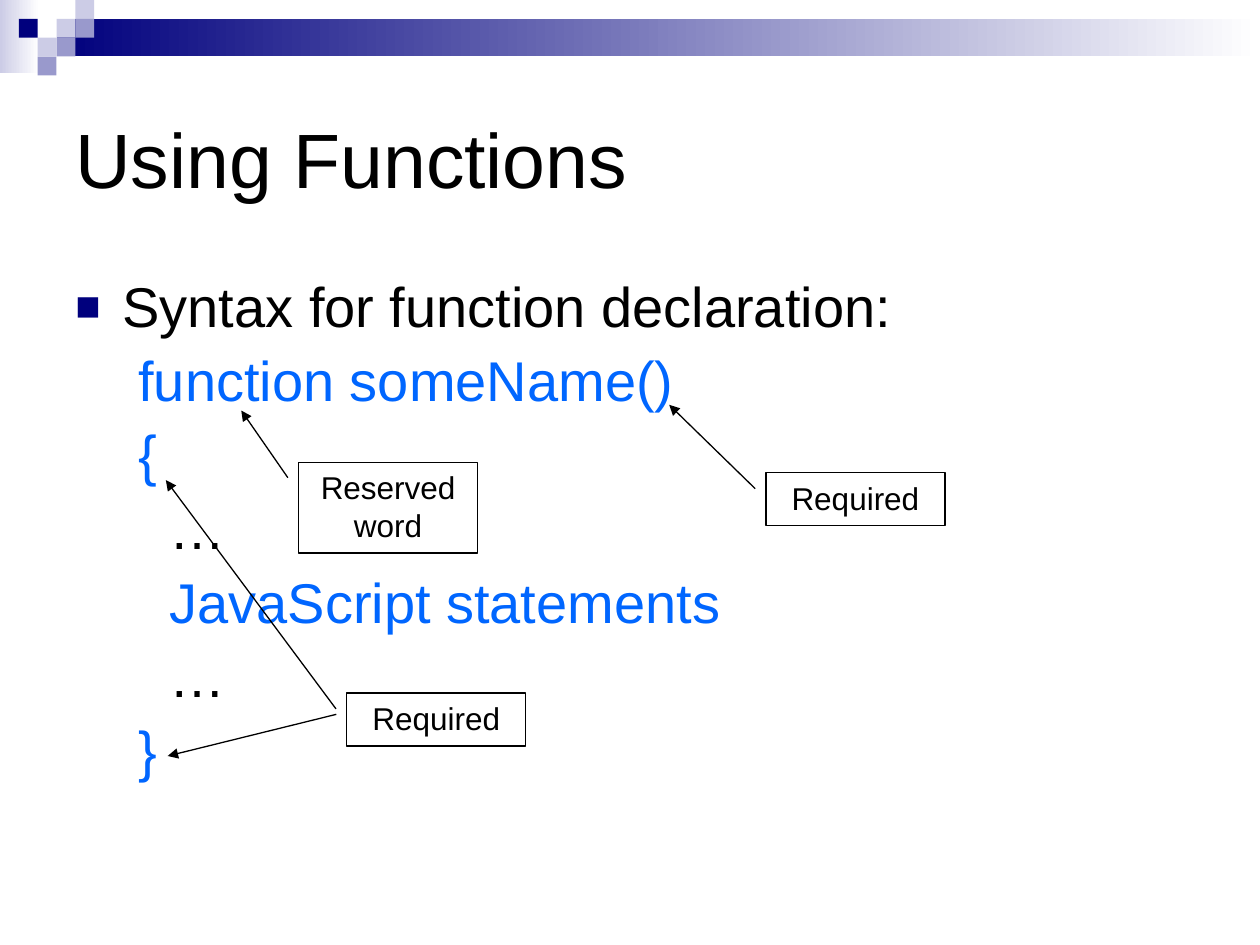
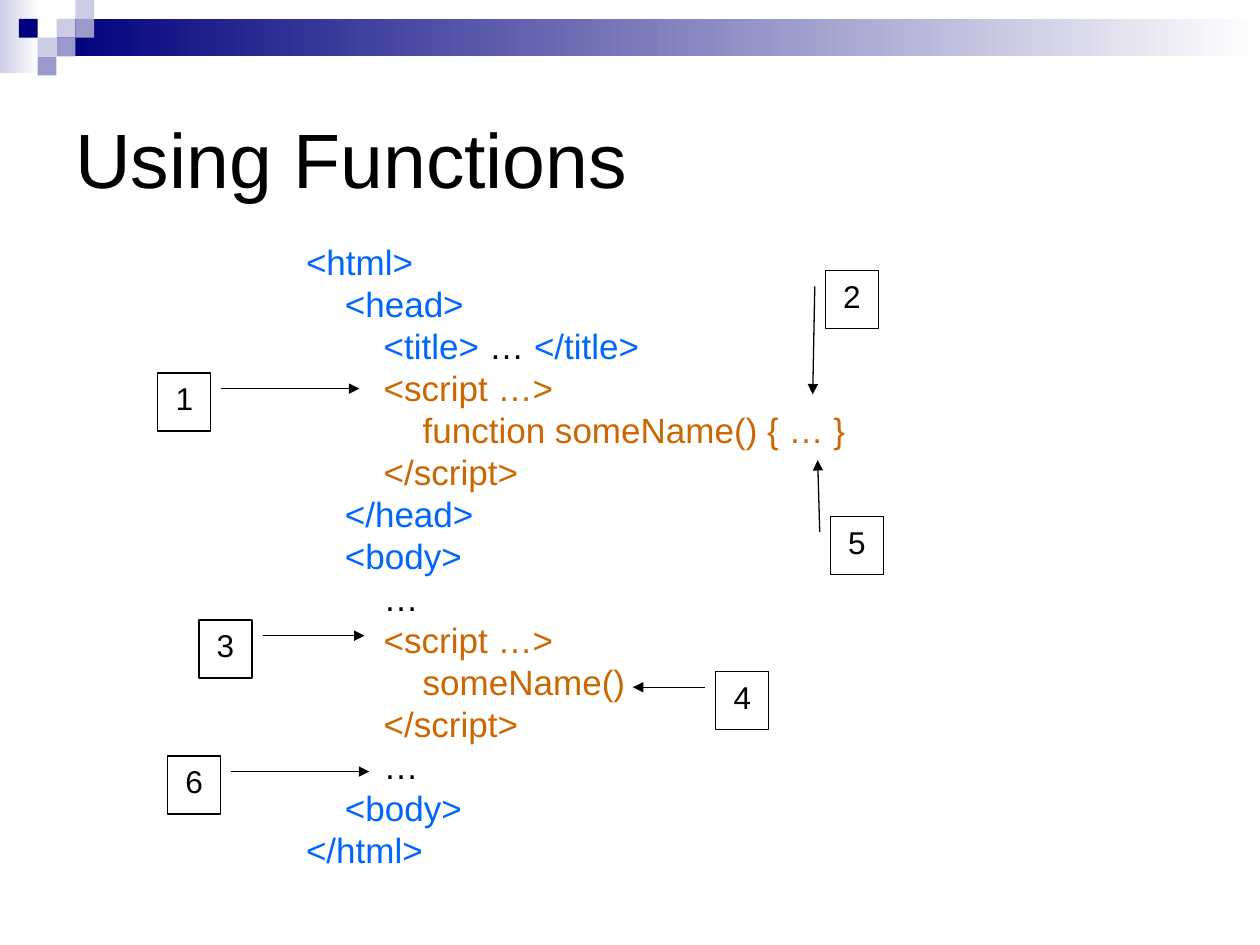
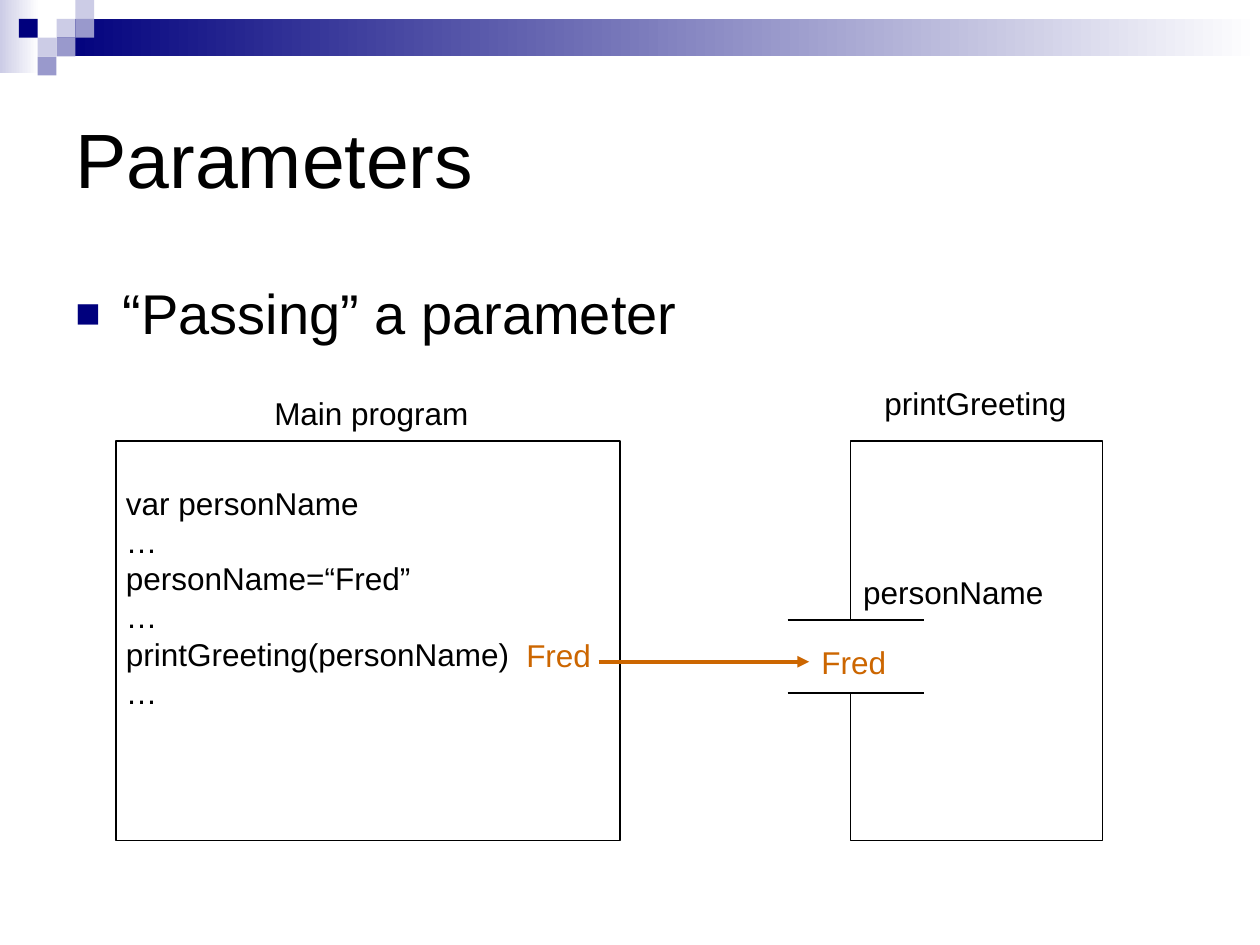
from dataclasses import dataclass

from lxml import etree
from pptx import Presentation
from pptx.dml.color import RGBColor
from pptx.enum.shapes import MSO_CONNECTOR, MSO_SHAPE
from pptx.enum.text import MSO_ANCHOR, PP_ALIGN
from pptx.oxml.ns import qn
from pptx.util import Cm, Pt

RECTANGLE = MSO_SHAPE.RECTANGLE
CALLOUT = MSO_SHAPE.LINE_CALLOUT_1
STRAIGHT = MSO_CONNECTOR.STRAIGHT
TOP, MIDDLE = MSO_ANCHOR.TOP, MSO_ANCHOR.MIDDLE
LEFT, CENTER = PP_ALIGN.LEFT, PP_ALIGN.CENTER

BLACK, WHITE = "000000", "FFFFFF"
NAVY, LILAC, LAVENDER = "00007D", "9999CC", "CCCCE6"
BLUE, ORANGE = "0066FF", "CC6600"
FONT = "Arial"
TILE = 0.38
SPACE_BEFORE = 0.24


@dataclass(frozen=True)
class Box:
    left: float
    top: float
    width: float
    height: float

    def lengths(self) -> tuple:
        return Cm(self.left), Cm(self.top), Cm(self.width), Cm(self.height)


@dataclass(frozen=True)
class Span:
    text: str
    color: str = BLACK


@dataclass(frozen=True)
class Style:
    size: int = 18
    align: int = LEFT
    anchor: int = TOP
    line_spacing: float = 1.0
    space_before: float = 0
    margin: float = 0
    indent: float = 0
    bulleted: bool = False


@dataclass(frozen=True)
class Callout:
    label: str
    box: Box
    adjustments: tuple


@dataclass(frozen=True)
class Segment:
    start: tuple
    end: tuple
    color: str = BLACK
    width: float = 0.75
    arrow: bool = False


TITLE_BOX = Box(1.27, 1.27, 22.86, 3.81)
TITLE = Style(44, anchor=MIDDLE)
LABEL = Style()
CALLOUT_LABEL = Style(align=CENTER)
BULLET = Style(32, margin=0.95, indent=-0.95, bulleted=True)
SYNTAX_BULLET = Style(32, line_spacing=0.9, margin=0.95, indent=-0.95, bulleted=True)
SYNTAX_CODE = Style(32, line_spacing=0.9, space_before=SPACE_BEFORE, margin=2.06, indent=-0.79)
HTML_CODE = Style(20, line_spacing=0.8, space_before=SPACE_BEFORE, margin=0.95, indent=-0.95)

TILES = [
    (3, 1, LAVENDER), (4, 0, LAVENDER), (4, 1, LILAC), (2, 2, LAVENDER),
    (1, 1, NAVY), (3, 2, LILAC), (2, 3, LILAC),
]

SYNTAX_LINES = [
    [Span("function someName()", BLUE)],
    [Span("{", BLUE)],
    [Span("  …")],
    [Span("  JavaScript statements", BLUE)],
    [Span("  …")],
    [Span("}", BLUE)],
]

SYNTAX_CALLOUTS = [
    Callout("Reserved word", Box(6.02, 9.32, 3.61, 1.83), (0.17, -0.06, -0.57, -0.32)),
    Callout("Required", Box(15.44, 9.53, 3.61, 1.07), (0.3, -0.06, -1.28, -0.54)),
    Callout("Required", Box(6.99, 13.97, 3.61, 1.07), (0.3, -0.06, -4.01, -1.01)),
]

HTML_LINES = [
    [Span("<html>", BLUE)],
    [Span("    <head>", BLUE)],
    [Span("        <title>", BLUE), Span(" … "), Span("</title>", BLUE)],
    [Span("        <script …>", ORANGE)],
    [Span("            function someName() { … }", ORANGE)],
    [Span("        </script>", ORANGE)],
    [Span("    </head>", BLUE)],
    [Span("    <body>", BLUE)],
    [Span("        …")],
    [Span("        <script …>", ORANGE)],
    [Span("            someName()", ORANGE)],
    [Span("        </script>", ORANGE)],
    [Span("        …")],
    [Span("    <body>", BLUE)],
    [Span("</html>", BLUE)],
]

STEPS = [
    (3.18, 7.52, (0.27, 1.2, 0.27, 3.8)),
    (16.64, 5.46, (0.27, -0.2, 2.13, -0.24)),
    (4.01, 12.5, (0.27, 1.2, 0.27, 3.12)),
    (14.43, 13.54, (0.27, -0.2, 0.27, -1.56)),
    (16.74, 10.41, (0.27, -0.2, -0.97, -0.24)),
    (3.38, 15.24, (0.27, 1.2, 0.27, 3.8)),
]

MAIN_PROGRAM = [
    "var personName", "…", "personName=“Fred”", "…", "printGreeting(personName)", "…",
]


def rgb(value: str) -> RGBColor:
    return RGBColor.from_string(value)


def add_bullet(paragraph) -> None:
    properties = paragraph._p.get_or_add_pPr()
    color = etree.SubElement(properties, qn("a:buClr"))
    etree.SubElement(color, qn("a:srgbClr"), val=NAVY)
    etree.SubElement(properties, qn("a:buSzPct"), val="75000")
    etree.SubElement(properties, qn("a:buFont"), typeface=FONT)
    etree.SubElement(properties, qn("a:buChar"), char="■")


def write_paragraph(paragraph, spans: list, style: Style, first: bool) -> None:
    properties = paragraph._p.get_or_add_pPr()
    properties.set("marL", str(Cm(style.margin)))
    properties.set("indent", str(Cm(style.indent)))
    if style.bulleted:
        add_bullet(paragraph)
    paragraph.alignment = style.align
    paragraph.line_spacing = style.line_spacing
    if not first:
        paragraph.space_before = Pt(style.size * style.space_before)
    for span in spans:
        run = paragraph.add_run()
        run.text = span.text
        run.font.name = FONT
        run.font.size = Pt(style.size)
        run.font.color.rgb = rgb(span.color)


def write_lines(frame, lines: list, style: Style, wrap: bool = True) -> None:
    frame.word_wrap = wrap
    frame.vertical_anchor = style.anchor
    for index, spans in enumerate(lines):
        paragraph = frame.add_paragraph() if index else frame.paragraphs[0]
        write_paragraph(paragraph, spans, style, index == 0)


def add_text(slide, box: Box, lines: list, style: Style, wrap: bool = True):
    frame = slide.shapes.add_textbox(*box.lengths()).text_frame
    write_lines(frame, lines, style, wrap)
    return frame


def add_label(slide, box: Box, text: str, color: str = BLACK) -> None:
    add_text(slide, box, [[Span(text, color)]], LABEL, wrap=False)


def add_rectangle(slide, box: Box, fill: str = "", fade_to: str = "", outlined: bool = False) -> None:
    rectangle = slide.shapes.add_shape(RECTANGLE, *box.lengths())
    rectangle.shadow.inherit = False
    if fade_to:
        rectangle.fill.gradient()
        rectangle.fill.gradient_angle = 0
        for stop, color, position in zip(rectangle.fill.gradient_stops, (fill, fade_to), (0, 1)):
            stop.color.rgb = rgb(color)
            stop.position = position
    elif fill:
        rectangle.fill.solid()
        rectangle.fill.fore_color.rgb = rgb(fill)
    else:
        rectangle.fill.background()
    if outlined:
        set_line(rectangle, BLACK, 0.75)
    else:
        rectangle.line.fill.background()


def set_line(shape, color: str, width: float, arrow: bool = False) -> None:
    shape.line.color.rgb = rgb(color)
    shape.line.width = Pt(width)
    if arrow:
        outline = shape._element.spPr.find(qn("a:ln"))
        etree.SubElement(outline, qn("a:tailEnd"), type="triangle")


def add_segment(slide, segment: Segment) -> None:
    ends = [Cm(value) for value in segment.start + segment.end]
    connector = slide.shapes.add_connector(STRAIGHT, *ends)
    set_line(connector, segment.color, segment.width, segment.arrow)
    etree.SubElement(connector._element.spPr, qn("a:effectLst"))


def add_callout(slide, callout: Callout) -> None:
    shape = slide.shapes.add_shape(CALLOUT, *callout.box.lengths())
    shape.shadow.inherit = False
    shape.fill.background()
    set_line(shape, BLACK, 0.75, arrow=True)
    for index, value in enumerate(callout.adjustments):
        shape.adjustments[index] = value
    write_lines(shape.text_frame, [[Span(callout.label)]], CALLOUT_LABEL)


def add_slide(presentation, title: str):
    slide = presentation.slides.add_slide(presentation.slide_layouts[6])
    add_rectangle(slide, Box(0, 0, 0.79, 1.47), LAVENDER, WHITE)
    add_rectangle(slide, Box(3 * TILE, TILE, 24.26, 2 * TILE), NAVY, WHITE)
    for column, row, color in TILES:
        add_rectangle(slide, Box(column * TILE, row * TILE, TILE, TILE), color)
    add_text(slide, TITLE_BOX, [[Span(title)]], TITLE)
    return slide


def build_syntax(presentation) -> None:
    slide = add_slide(presentation, "Using Functions")
    declaration = [[Span("Syntax for function declaration:")]]
    frame = add_text(slide, Box(1.27, 5.5, 22.86, 10.8), declaration, SYNTAX_BULLET)
    for spans in SYNTAX_LINES:
        write_paragraph(frame.add_paragraph(), spans, SYNTAX_CODE, first=False)
    for callout in SYNTAX_CALLOUTS:
        add_callout(slide, callout)
    add_segment(slide, Segment((6.78, 14.4), (3.38, 15.24), arrow=True))


def build_call_order(presentation) -> None:
    slide = add_slide(presentation, "Using Functions")
    add_text(slide, Box(5.92, 4.88, 12.9, 12.9), HTML_LINES, HTML_CODE)
    for number, (left, top, adjustments) in enumerate(STEPS, start=1):
        add_callout(slide, Callout(str(number), Box(left, top, 1.07, 1.17), adjustments))


def build_parameters(presentation) -> None:
    slide = add_slide(presentation, "Parameters")
    add_text(slide, Box(1.27, 5.5, 13.34, 1.9), [[Span("“Passing” a parameter")]], BULLET)
    add_rectangle(slide, Box(2.34, 8.89, 10.16, 8.05), outlined=True)
    add_label(slide, Box(5.28, 7.82, 4.42, 1.02), "Main program")
    add_rectangle(slide, Box(17.15, 8.89, 5.08, 8.05), outlined=True)
    add_label(slide, Box(17.58, 7.62, 4.19, 1.02), "printGreeting")
    program = [[Span(line)] for line in MAIN_PROGRAM]
    add_text(slide, Box(2.29, 9.63, 8.23, 4.83), program, LABEL, wrap=False)
    add_rectangle(slide, Box(16.51, 12.5, 1.27, 1.47), WHITE)
    for height in (12.5, 13.97):
        add_segment(slide, Segment((15.88, height), (18.62, height)))
    add_label(slide, Box(17.15, 11.43, 4.14, 1.02), "personName")
    add_label(slide, Box(10.36, 12.7, 1.83, 1.02), "Fred", ORANGE)
    add_label(slide, Box(16.31, 12.83, 1.83, 1.02), "Fred", ORANGE)
    add_segment(slide, Segment((12.07, 13.34), (16.31, 13.34), ORANGE, 2.25, arrow=True))


def main() -> None:
    presentation = Presentation()
    presentation.slide_width = Cm(25.4)
    presentation.slide_height = Cm(19.05)
    build_syntax(presentation)
    build_call_order(presentation)
    build_parameters(presentation)
    presentation.save("out.pptx")


if __name__ == "__main__":
    main()
